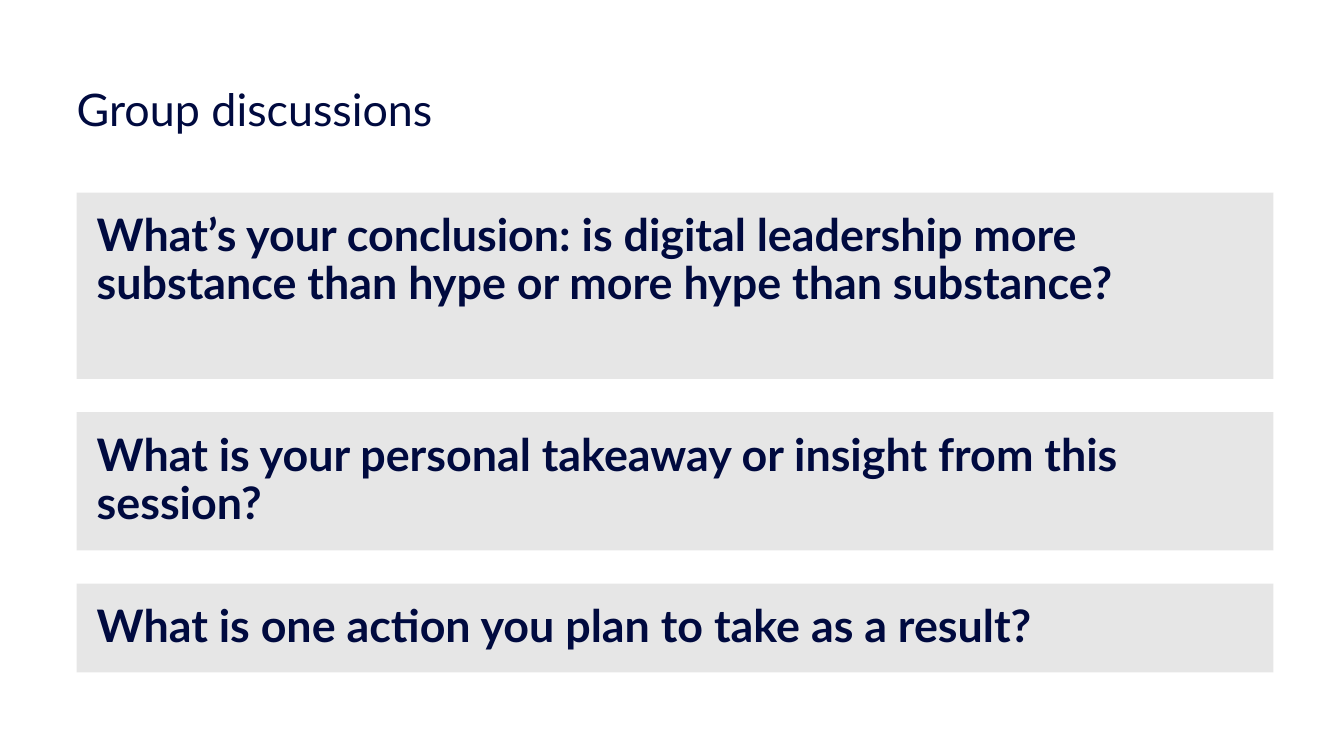
from dataclasses import dataclass

from pptx import Presentation
from pptx.dml.color import RGBColor
from pptx.enum.shapes import MSO_SHAPE
from pptx.enum.text import MSO_ANCHOR, MSO_AUTO_SIZE, PP_ALIGN
from pptx.slide import Slide
from pptx.text.text import TextFrame
from pptx.util import Inches, Pt

NAVY = RGBColor(0x00, 0x0A, 0x3F)
LIGHT_GREY = RGBColor(0xE6, 0xE6, 0xE6)
FONT = "Lato"
PANEL_LEFT, PANEL_WIDTH = 0.76, 11.87
PANEL_PADDING = Inches(0.2)


@dataclass(frozen=True)
class Question:
    text: str
    top: float
    height: float


QUESTIONS = [
    Question("What’s your conclusion: is digital leadership more substance "
             "than hype or more hype than substance?", 1.91, 1.85),
    Question("What is your personal takeaway or insight from this session?",
             4.09, 1.37),
    Question("What is one action you plan to take as a result?", 5.79, 0.88),
]


def write_text(frame: TextFrame, text: str, anchor: MSO_ANCHOR, bold: bool) -> None:
    frame.word_wrap = True
    frame.auto_size = MSO_AUTO_SIZE.NONE
    frame.vertical_anchor = anchor
    paragraph = frame.paragraphs[0]
    paragraph.alignment = PP_ALIGN.LEFT
    paragraph.line_spacing = 0.9
    paragraph.space_before = Pt(0)
    run = paragraph.add_run()
    run.text = text
    run.font.name = FONT
    run.font.size = Pt(32)
    run.font.bold = bold
    run.font.color.rgb = NAVY


def add_heading(slide: Slide, text: str) -> None:
    heading = slide.shapes.title
    heading.left, heading.top = Inches(0.66), Inches(0.39)
    heading.width, heading.height = Inches(11.5), Inches(1.45)
    write_text(heading.text_frame, text, MSO_ANCHOR.MIDDLE, bold=False)


def add_question(slide: Slide, question: Question) -> None:
    panel = slide.shapes.add_shape(
        MSO_SHAPE.RECTANGLE, Inches(PANEL_LEFT), Inches(question.top),
        Inches(PANEL_WIDTH), Inches(question.height))
    panel.shadow.inherit = False
    panel.fill.solid()
    panel.fill.fore_color.rgb = LIGHT_GREY
    panel.line.fill.background()
    frame = panel.text_frame
    frame.margin_left = frame.margin_right = PANEL_PADDING
    frame.margin_top = frame.margin_bottom = PANEL_PADDING
    write_text(frame, question.text, MSO_ANCHOR.TOP, bold=True)


def main() -> None:
    presentation = Presentation()
    presentation.slide_width = Inches(13.33)
    presentation.slide_height = Inches(7.5)
    slide = presentation.slides.add_slide(presentation.slide_layouts[5])

    # Heading
    add_heading(slide, "Group discussions")

    # Discussion questions
    for question in QUESTIONS:
        add_question(slide, question)

    presentation.save("out.pptx")


if __name__ == "__main__":
    main()
